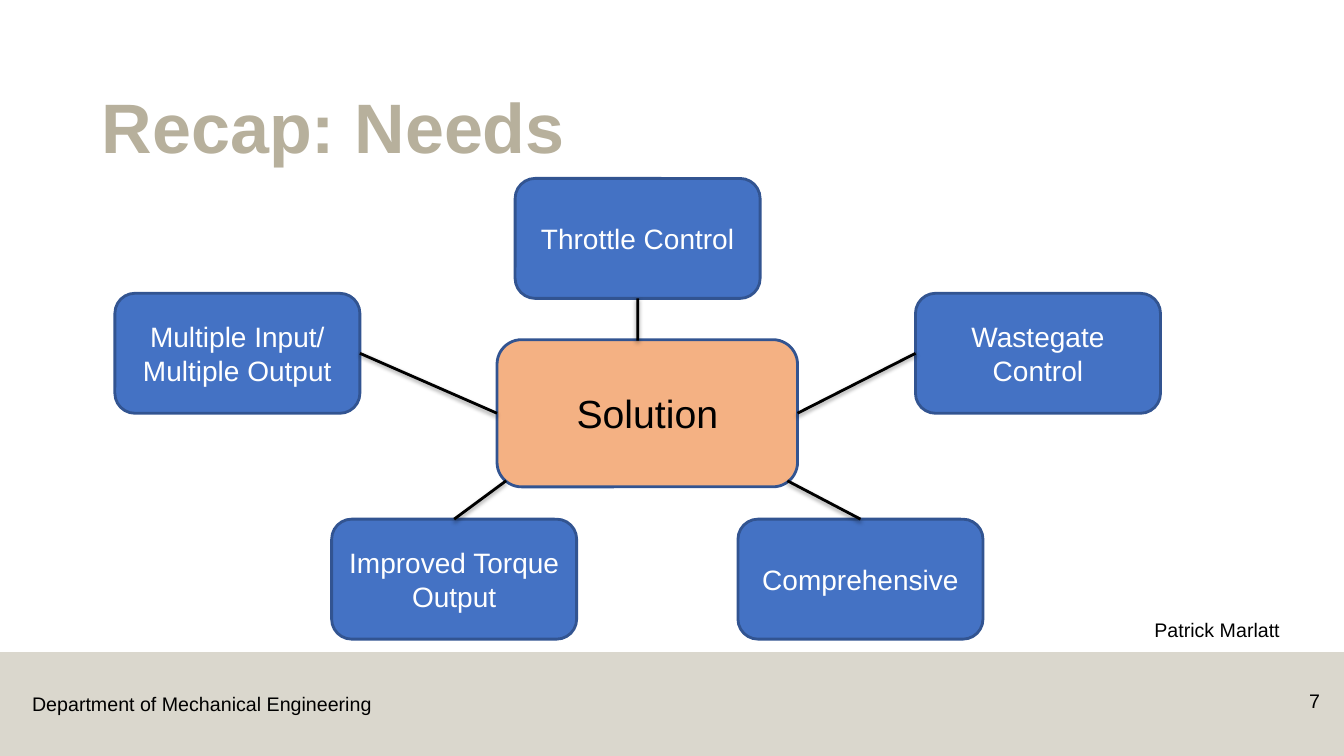
"""Build the needs recap slide, with places given in percent of the slide's size."""
from dataclasses import dataclass
from typing import Optional

import lxml.etree
import pptx
import pptx.dml.color
import pptx.enum.shapes
import pptx.enum.text
import pptx.oxml
import pptx.oxml.ns
import pptx.util

ALIGN = pptx.enum.text.PP_ALIGN
ANCHOR = pptx.enum.text.MSO_ANCHOR
PRESET = pptx.enum.shapes.MSO_SHAPE
FONT = "Arial"
BLACK, WHITE, SAND = "000000", "FFFFFF", "B7B09C"
BLUE, NAVY, ORANGE = "4472C4", "325491", "F4B183"
SLIDE_WIDTH = pptx.util.Inches(13.33)
SLIDE_HEIGHT = pptx.util.Inches(7.5)
NEED_WIDTH, NEED_HEIGHT = 18.23, 15.87
UPPER_ROW, LOWER_ROW = 38.8, 68.67
TOP, LEFT, BOTTOM, RIGHT = range(4)
SHADOW = (
    '<a:effectLst xmlns:a="http://schemas.openxmlformats.org/drawingml/2006/main">'
    '<a:outerShdw blurRad="39370" dist="20320" dir="5400000" rotWithShape="0">'
    '<a:srgbClr val="000000"><a:alpha val="38000"/></a:srgbClr>'
    "</a:outerShdw></a:effectLst>"
)


@dataclass(frozen=True)
class Box:
    left: float
    top: float
    width: float
    height: float


@dataclass(frozen=True)
class Label:
    text: str
    box: Box
    size: int = 14
    color: str = BLACK
    bold: bool = False
    align: ALIGN = ALIGN.LEFT
    anchor: ANCHOR = ANCHOR.TOP
    line_spacing: float = 1.0


@dataclass(frozen=True)
class Need:
    text: str
    left: float
    top: float
    side: int
    solution_side: Optional[int] = None
    end: tuple[float, float] = (0, 0)


BAND = Box(0, 86.27, 100, 13.73)
SOLUTION = Box(36.98, 44.93, 22.36, 19.47)
LABELS = [
    Label("Department of Mechanical Engineering", Box(1.65, 90.93, 26.93, 4.53)),
    Label("Recap: Needs", Box(6.83, 8.27, 86.27, 14.67), 50, SAND, True,
          anchor=ANCHOR.BOTTOM, line_spacing=0.9),
    Label("7", Box(93.17, 90.53, 5.78, 5.33), align=ALIGN.RIGHT),
    Label("Patrick Marlatt", Box(85.15, 81.47, 14.8, 4.53), line_spacing=0.9),
]
NEEDS = [
    Need("Multiple Input/\nMultiple Output", 8.55, UPPER_ROW, RIGHT, LEFT),
    Need("Throttle Control", 38.33, 23.6, BOTTOM, end=(47.45, 45.07)),
    Need("Improved Torque\nOutput", 24.68, LOWER_ROW, TOP, end=(37.66, 63.6)),
    Need("Wastegate Control", 68.12, UPPER_ROW, LEFT, RIGHT),
    Need("Comprehensive", 54.91, LOWER_ROW, TOP, end=(58.59, 63.6)),
]


def rgb(color: str) -> pptx.dml.color.RGBColor:
    """Turn a hex string into a colour."""
    return pptx.dml.color.RGBColor.from_string(color)


def across(percent: float) -> int:
    """Give a share of the slide's width."""
    return round(SLIDE_WIDTH * percent / 100)


def down(percent: float) -> int:
    """Give a share of the slide's height."""
    return round(SLIDE_HEIGHT * percent / 100)


def place(box: Box) -> tuple[int, int, int, int]:
    """Give the left, top, width and height of a box."""
    return across(box.left), down(box.top), across(box.width), down(box.height)


def write(shape, label: Label) -> None:
    """Write the label's text into a shape."""
    frame = shape.text_frame
    frame.text = label.text
    frame.word_wrap = True
    frame.vertical_anchor = label.anchor
    for paragraph in frame.paragraphs:
        paragraph.alignment = label.align
        paragraph.line_spacing = label.line_spacing
        paragraph.font.name = FONT
        paragraph.font.size = pptx.util.Pt(label.size)
        paragraph.font.bold = label.bold
        paragraph.font.color.rgb = rgb(label.color)


def draw_band(slide) -> None:
    """Draw the half transparent footer band."""
    shape = slide.shapes.add_shape(PRESET.RECTANGLE, *place(BAND))
    shape.shadow.inherit = False
    shape.fill.solid()
    shape.fill.fore_color.rgb = rgb(SAND)
    shape.line.fill.background()
    color = shape.fill._xPr.find(".//" + pptx.oxml.ns.qn("a:srgbClr"))
    lxml.etree.SubElement(color, pptx.oxml.ns.qn("a:alpha"), val="50000")


def draw_node(slide, label: Label, fill: str):
    """Draw a rounded box with centred text."""
    shape = slide.shapes.add_shape(PRESET.ROUNDED_RECTANGLE, *place(label.box))
    shape.shadow.inherit = False
    shape.fill.solid()
    shape.fill.fore_color.rgb = rgb(fill)
    shape.line.color.rgb = rgb(NAVY)
    shape.line.width = pptx.util.Pt(2)
    write(shape, label)
    shape.text_frame.margin_left = pptx.util.Inches(0.08)
    shape.text_frame.margin_right = pptx.util.Inches(0.08)
    return shape


def draw_link(slide, need: Need, node, solution) -> None:
    """Draw the line from a need to the solution."""
    end_x, end_y = across(need.end[0]), down(need.end[1])
    connector = slide.shapes.add_connector(
        pptx.enum.shapes.MSO_CONNECTOR.STRAIGHT, node.left, node.top, end_x, end_y)
    connector.begin_connect(node, need.side)
    if need.solution_side is not None:
        connector.end_connect(solution, need.solution_side)
    connector.line.color.rgb = rgb(BLACK)
    connector.line.width = pptx.util.Pt(2)
    connector._element.spPr.append(pptx.oxml.parse_xml(SHADOW))


def main() -> None:
    """Build and save the slide."""
    presentation = pptx.Presentation()
    presentation.slide_width = SLIDE_WIDTH
    presentation.slide_height = SLIDE_HEIGHT
    slide = presentation.slides.add_slide(presentation.slide_layouts[6])
    draw_band(slide)
    for label in LABELS:
        write(slide.shapes.add_textbox(*place(label.box)), label)
    nodes = []
    for need in NEEDS:
        box = Box(need.left, need.top, NEED_WIDTH, NEED_HEIGHT)
        label = Label(need.text, box, 20, WHITE, align=ALIGN.CENTER, anchor=ANCHOR.MIDDLE)
        nodes.append(draw_node(slide, label, BLUE))
    solution_label = Label("Solution", SOLUTION, 28, align=ALIGN.CENTER, anchor=ANCHOR.MIDDLE)
    solution = draw_node(slide, solution_label, ORANGE)
    for need, node in zip(NEEDS, nodes):
        draw_link(slide, need, node, solution)
    presentation.save("out.pptx")


if __name__ == "__main__":
    main()
